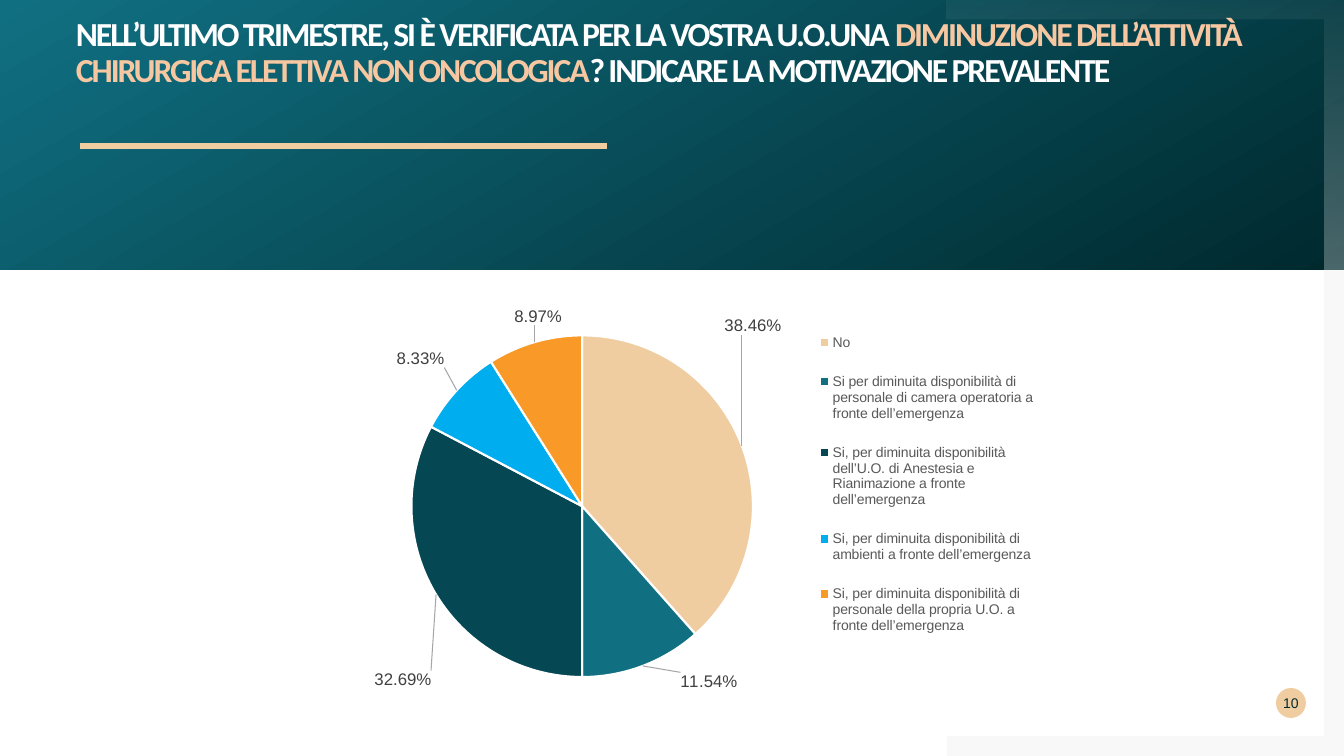
from pptx import Presentation
from pptx.chart.data import CategoryChartData
from pptx.dml.color import RGBColor
from pptx.enum.chart import XL_CHART_TYPE, XL_LEGEND_POSITION
from pptx.enum.shapes import MSO_CONNECTOR, MSO_SHAPE
from pptx.enum.text import MSO_ANCHOR, PP_ALIGN
from pptx.oxml import parse_xml
from pptx.oxml.ns import nsdecls, qn
from pptx.util import Pt

COLORS = {
    "dark": "00292E", "teal": "107082", "sand": "F0CDA1", "peach": "F7C7A2",
    "petrol": "054854", "sky": "00AEEF", "orange": "F99927", "white": "FFFFFF",
    "gray": "808080", "legend": "595959", "label": "404040", "leader": "A6A6A6",
}
TITLE = [
    ("NELL’ULTIMO TRIMESTRE, SI È VERIFICATA PER LA VOSTRA U.O.UNA ", "white"),
    ("DIMINUZIONE DELL’ATTIVITÀ CHIRURGICA ELETTIVA NON ONCOLOGICA", "peach"),
    ("? INDICARE LA MOTIVAZIONE PREVALENTE", "white"),
]
PAGE_NUMBER = "10"
SLICES = [
    ("No", 38.46, "sand", (-23, -109)),
    ("Si per diminuita disponibilità di personale di camera operatoria a fronte dell’emergenza",
     11.54, "teal", (36, 1)),
    ("Si, per diminuita disponibilità dell’U.O. di Anestesia e Rianimazione a fronte dell’emergenza",
     32.69, "petrol", (0, 73)),
    ("Si, per diminuita disponibilità di ambienti a fronte dell’emergenza",
     8.33, "sky", (-8, -19)),
    ("Si, per diminuita disponibilità di personale della propria U.O. a fronte dell’emergenza",
     8.97, "orange", (29, -11)),
]
WIDTH, HEIGHT = 1344, 756
BAND_HEIGHT = 270
CORNER_LEFT, CORNER_THICKNESS = 947, 20
CHART_BOX = (374, 288, 674, 437)
PIE_BOX = (411, 335, 342, 342)
LEGEND_BOX = (817, 311, 220, 346)
LABEL_SIZE = (70, 24)
SCALE = 914400 / 100.8


def px(*lengths):
    return [round(length * SCALE) for length in lengths]


def rgb(name):
    return RGBColor.from_string(COLORS[name])


def apply(target, values):
    for name, value in values.items():
        setattr(target, name, value)


def set_solid(shape, name):
    shape.fill.solid()
    shape.fill.fore_color.rgb = rgb(name)


def set_gradient(shape, names, angle):
    shape.fill.gradient()
    shape.fill.gradient_angle = angle
    for stop, name in zip(shape.fill.gradient_stops, names):
        stop.color.rgb = rgb(name)


def set_alphas(shape, percents):
    for color, percent in zip(shape._element.spPr.iter(qn("a:srgbClr")), percents):
        color.append(parse_xml(f'<a:alpha {nsdecls("a")} val="{percent * 1000}"/>'))


def clean(shape):
    shape.shadow.inherit = False
    shape.line.fill.background()
    return shape


def add_corner(slide, outer, inner):
    right = WIDTH - CORNER_THICKNESS
    points = [(CORNER_LEFT, outer), (WIDTH, outer), (WIDTH, BAND_HEIGHT),
              (right, BAND_HEIGHT), (right, inner), (CORNER_LEFT, inner)]
    builder = slide.shapes.build_freeform(*points[0], scale=SCALE)
    builder.add_line_segments(points[1:], close=True)
    return clean(builder.convert_to_shape())


def add_run(paragraph, text, color, values):
    run = paragraph.add_run()
    run.text = text
    run.font.color.rgb = rgb(color)
    apply(run.font, values)
    return run


def chart_layout(box, target=""):
    left, top, width, height = CHART_BOX
    return parse_xml(
        f'<c:layout {nsdecls("c")}><c:manualLayout>{target}'
        '<c:xMode val="edge"/><c:yMode val="edge"/>'
        f'<c:x val="{(box[0] - left) / width:.3f}"/><c:y val="{(box[1] - top) / height:.3f}"/>'
        f'<c:w val="{box[2] / width:.3f}"/><c:h val="{box[3] / height:.3f}"/>'
        '</c:manualLayout></c:layout>')


def data_labels():
    width, height = CHART_BOX[2:]
    shared = (
        '<c:numFmt formatCode="0.00%" sourceLinked="0"/>'
        '<c:spPr><a:noFill/><a:ln><a:noFill/></a:ln></c:spPr>'
        '<c:txPr><a:bodyPr wrap="none"/><a:p><a:pPr><a:defRPr sz="1200" b="0"><a:solidFill>'
        f'<a:srgbClr val="{COLORS["label"]}"/></a:solidFill><a:latin typeface="Arial"/>'
        '</a:defRPr></a:pPr><a:endParaRPr lang="it-IT"/></a:p></c:txPr><c:dLblPos val="outEnd"/>'
        '<c:showLegendKey val="0"/><c:showVal val="0"/><c:showCatName val="0"/>'
        '<c:showSerName val="0"/><c:showPercent val="1"/><c:showBubbleSize val="0"/>')
    size = (
        '<c:extLst><c:ext uri="{CE6537A1-D6FC-4f65-9D91-7224C49458BB}" '
        'xmlns:c15="http://schemas.microsoft.com/office/drawing/2012/chart">'
        f'<c15:layout><c:manualLayout><c:w val="{LABEL_SIZE[0] / width:.3f}"/>'
        f'<c:h val="{LABEL_SIZE[1] / height:.3f}"/></c:manualLayout></c15:layout></c:ext></c:extLst>')
    labels = "".join(
        f'<c:dLbl><c:idx val="{index}"/><c:layout><c:manualLayout>'
        f'<c:x val="{dx / width:.3f}"/><c:y val="{dy / height:.3f}"/>'
        f'</c:manualLayout></c:layout>{shared}{size}</c:dLbl>'
        for index, (_, _, _, (dx, dy)) in enumerate(SLICES))
    return parse_xml(
        f'<c:dLbls {nsdecls("c", "a")}>{labels}{shared}<c:showLeaderLines val="1"/>'
        '<c:leaderLines><c:spPr><a:ln w="9525"><a:solidFill>'
        f'<a:srgbClr val="{COLORS["leader"]}"/></a:solidFill></a:ln></c:spPr></c:leaderLines></c:dLbls>')


def add_pie(slide):
    data = CategoryChartData()
    data.categories = [label for label, *_ in SLICES]
    data.add_series("Series 1", [value for _, value, *_ in SLICES])
    chart = slide.shapes.add_chart(XL_CHART_TYPE.PIE, *px(*CHART_BOX), data).chart
    small_text = {"size": Pt(10), "name": "Arial"}
    apply(chart, {"has_title": False, "has_legend": True})
    apply(chart.font, small_text)
    apply(chart.legend, {"position": XL_LEGEND_POSITION.RIGHT, "include_in_layout": False})
    apply(chart.legend.font, small_text)
    chart.legend.font.color.rgb = rgb("legend")
    plot = chart.plots[0]
    plot.vary_by_categories = True
    series = plot.series[0]
    for index, (_, _, color, _) in enumerate(SLICES):
        point = series.points[index].format
        set_solid(point, color)
        point.line.color.rgb = rgb("white")
        point.line.width = Pt(1.5)
    series._element.find(qn("c:cat")).addprevious(data_labels())
    plot_area = next(chart._chartSpace.iter(qn("c:plotArea")))
    legend = next(chart._chartSpace.iter(qn("c:legend")))
    for parent in (plot_area, legend):
        for layout in parent.findall(qn("c:layout")):
            parent.remove(layout)
    plot_area.insert(0, chart_layout(PIE_BOX, '<c:layoutTarget val="inner"/>'))
    legend.find(qn("c:legendPos")).addnext(chart_layout(LEGEND_BOX))


def main():
    presentation = Presentation()
    presentation.slide_width, presentation.slide_height = px(WIDTH, HEIGHT)
    slide = presentation.slides.add_slide(presentation.slide_layouts[6])

    gray_corner = add_corner(slide, HEIGHT, HEIGHT - CORNER_THICKNESS)
    set_solid(gray_corner, "gray")
    set_alphas(gray_corner, [5])
    band = clean(slide.shapes.add_shape(MSO_SHAPE.RECTANGLE, *px(0, 0, WIDTH, BAND_HEIGHT)))
    set_gradient(band, ("dark", "teal"), 120)
    white_corner = add_corner(slide, 0, CORNER_THICKNESS)
    set_gradient(white_corner, ("white", "white"), 270)
    set_alphas(white_corner, [5, 30])

    title = slide.shapes.add_textbox(*px(76, 17, 1231, 119))
    badge = clean(slide.shapes.add_shape(MSO_SHAPE.OVAL, *px(1276, 688, 30, 30)))
    set_solid(badge, "sand")
    margins = dict.fromkeys(("margin_left", "margin_top", "margin_right", "margin_bottom"), 0)
    apply(title.text_frame, {**margins, "word_wrap": True})
    apply(badge.text_frame, {**margins, "word_wrap": False, "vertical_anchor": MSO_ANCHOR.MIDDLE})
    paragraph = title.text_frame.paragraphs[0]
    paragraph.line_spacing = 0.9
    for text, color in TITLE:
        run = add_run(paragraph, text, color, {"size": Pt(24), "bold": True, "name": "Calibri"})
        run.font._element.set("spc", "-150")
    paragraph = badge.text_frame.paragraphs[0]
    paragraph.alignment = PP_ALIGN.CENTER
    add_run(paragraph, PAGE_NUMBER, "dark", {"size": Pt(10), "name": "Arial"})

    rule = slide.shapes.add_connector(MSO_CONNECTOR.STRAIGHT, *px(80, 146, 607, 146))
    rule.line.color.rgb = rgb("sand")
    rule.line.width = Pt(4.32)
    rule._element.spPr.append(parse_xml(f'<a:effectLst {nsdecls("a")}/>'))
    add_pie(slide)
    presentation.save("out.pptx")


if __name__ == "__main__":
    main()
